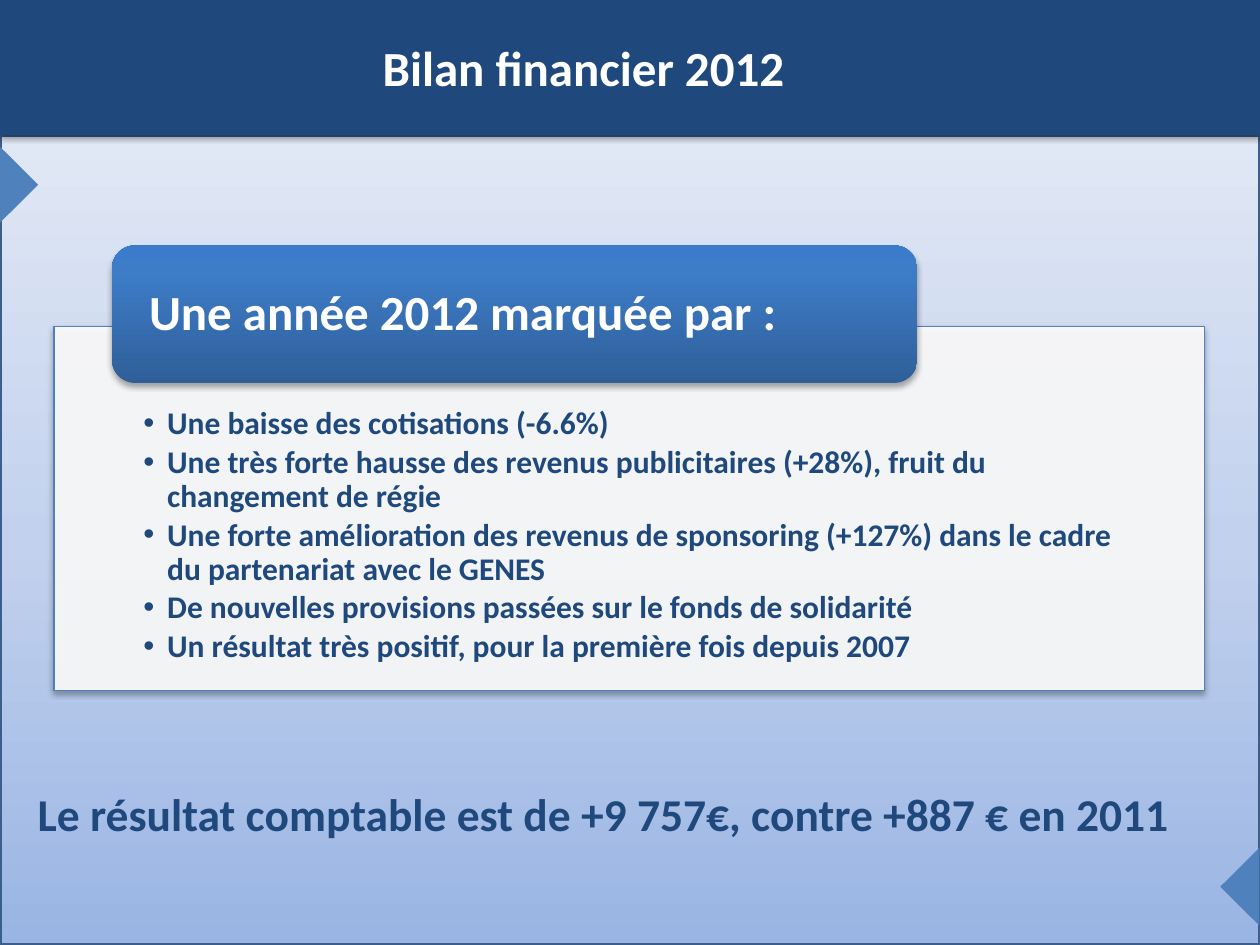
from copy import deepcopy

from lxml.etree import SubElement
from pptx import Presentation
from pptx.dml.color import RGBColor
from pptx.enum.shapes import MSO_SHAPE
from pptx.enum.text import MSO_ANCHOR, MSO_AUTO_SIZE, PP_ALIGN
from pptx.oxml.ns import qn
from pptx.util import Cm, Pt

NAVY, BLUE, WHITE = "1F497D", "4F81BD", "FFFFFF"


def add_block(kind, left, top, width, height, fills, shadow=False):
    """Add a shape with one fill colour, or a rising gradient of (position, colour)."""
    block = slide.shapes.add_shape(kind, Cm(left), Cm(top), Cm(width), Cm(height))
    block.line.fill.background()
    block.shadow.inherit = False
    if isinstance(fills, str):
        block.fill.solid()
        block.fill.fore_color.rgb = RGBColor.from_string(fills)
    else:
        block.fill.gradient()
        block.fill.gradient_angle = 90
        stops = block.element.spPr.find(".//" + qn("a:gsLst"))
        stops.insert(1, deepcopy(stops[0]))
        for stop, (position, colour) in zip(block.fill.gradient_stops, fills):
            stop.position = position
            stop.color.rgb = RGBColor.from_string(colour)
    if shadow:
        effects = block.element.spPr.find(qn("a:effectLst"))
        outer = SubElement(effects, qn("a:outerShdw"), blurRad="40000", dist="23000",
                           dir="5400000", rotWithShape="0")
        black = SubElement(outer, qn("a:srgbClr"), val="000000")
        SubElement(black, qn("a:alpha"), val="35000")
    return block


def format_text(paragraph, size, colour):
    for span in paragraph.runs:
        span.font.name = "Calibri"
        span.font.size = Pt(size)
        span.font.bold = True
        span.font.color.rgb = RGBColor.from_string(colour)


deck = Presentation()
deck.slide_width, deck.slide_height = Cm(25.4), Cm(19.05)
slide = deck.slides.add_slide(deck.slide_layouts[1])
title, body = slide.shapes.title, slide.placeholders[1]

# Background, side triangles and header band
background = add_block(MSO_SHAPE.RECTANGLE, 0, 2.72, 25.4, 16.33,
                       [(0, "9AB5E4"), (0.5, "C2D1ED"), (1, "E1E8F5")])
background.line.color.rgb = RGBColor.from_string("3A5F8C")
background.line.width = Pt(2)
for left, top, rotation in [(-0.41, 3.33, 90), (24.21, 17.48, 270)]:
    triangle = add_block(MSO_SHAPE.ISOSCELES_TRIANGLE, left, top, 1.57, 0.79, BLUE)
    triangle.rotation = rotation
add_block(MSO_SHAPE.RECTANGLE, 0, 0, 25.4, 2.72, NAVY, shadow=True)

# White panel behind the list
panel = add_block(MSO_SHAPE.RECTANGLE, 1.09, 6.58, 23.19, 7.34, WHITE, shadow=True)
SubElement(panel.element.spPr.find(qn("a:solidFill"))[0], qn("a:alpha"), val="90000")
panel.line.color.rgb = RGBColor.from_string(BLUE)
panel.line.width = Pt(0.75)

# Bring the placeholders in front of the panels
for placeholder in (title, body):
    placeholder.element.getparent().append(placeholder.element)

# Title
title.left, title.top, title.width, title.height = Cm(5.31), Cm(0.53), Cm(12.9), Cm(1.63)
title.text_frame.text = "Bilan financier 2012"
title.text_frame.auto_size = MSO_AUTO_SIZE.NONE
title.text_frame.vertical_anchor = MSO_ANCHOR.MIDDLE
title.text_frame.paragraphs[0].alignment = PP_ALIGN.CENTER
format_text(title.text_frame.paragraphs[0], 28, WHITE)

# Bulleted list
body.left, body.top, body.width, body.height = panel.left, panel.top, panel.width, panel.height
frame = body.text_frame
frame.auto_size = MSO_AUTO_SIZE.NONE
frame.vertical_anchor = MSO_ANCHOR.TOP
frame.margin_left = frame.margin_right = Cm(1.8)
frame.margin_top, frame.margin_bottom = Cm(1.63), Cm(0.36)
points = [
    "Une baisse des cotisations (-6.6%)",
    "Une très forte hausse des revenus publicitaires (+28%), fruit du changement de régie",
    "Une forte amélioration des revenus de sponsoring (+127%) dans le cadre "
    "du partenariat avec le GENES",
    "De nouvelles provisions passées sur le fonds de solidarité",
    "Un résultat très positif, pour la première fois depuis 2007",
]
frame.text = "\n".join(points)
for para in frame.paragraphs:
    para.level = 1
    properties = para._p.get_or_add_pPr()
    properties.set("marL", str(Cm(0.48)))
    properties.set("indent", str(-Cm(0.48)))
    SubElement(properties, qn("a:buChar"), char="•")
    para.line_spacing = 0.9
    para.space_before, para.space_after = Pt(0), Pt(2.7)
    format_text(para, 18, NAVY)

# Banner over the panel
banner = add_block(MSO_SHAPE.ROUNDED_RECTANGLE, 2.26, 4.95, 16.23, 2.77,
                   [(0, "2F5F99"), (0.8, "3D7CC7"), (1, "3A7CCB")], shadow=True)
frame = banner.text_frame
frame.text = "Une année 2012 marquée par :"
frame.vertical_anchor = MSO_ANCHOR.MIDDLE
frame.margin_left = frame.margin_right = Cm(0.61)
frame.margin_top = frame.margin_bottom = 0
frame.paragraphs[0].alignment = PP_ALIGN.LEFT
frame.paragraphs[0].line_spacing = 0.9
format_text(frame.paragraphs[0], 28, WHITE)

# Closing statement
result = slide.shapes.add_textbox(Cm(0.51), Cm(15.72), Cm(23.39), Cm(1.37))
result.text_frame.text = "Le résultat comptable est de +9 757€, contre +887 € en 2011"
result.text_frame.word_wrap = False
result.text_frame.auto_size = MSO_AUTO_SIZE.SHAPE_TO_FIT_TEXT
format_text(result.text_frame.paragraphs[0], 26, NAVY)

deck.save("out.pptx")
